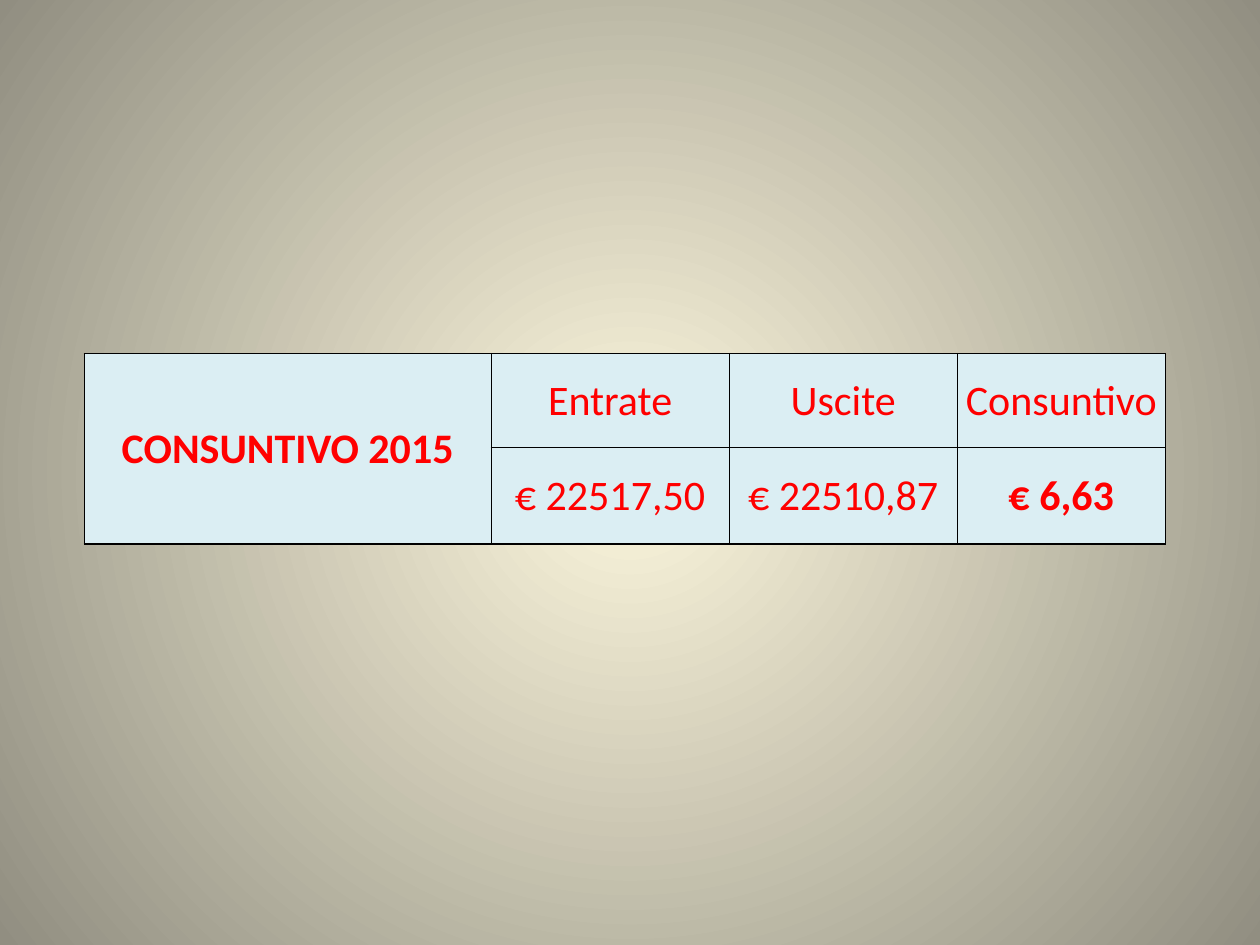
"""Build the slide with the 2015 final balance table."""
from lxml import etree
from pptx import Presentation
from pptx.dml.color import RGBColor
from pptx.enum import text
from pptx.oxml.ns import qn
from pptx.util import Cm, Pt

ROWS = [
    ["CONSUNTIVO 2015", "Entrate", "Uscite", "Consuntivo"],
    ["", "€ 22517,50", "€ 22510,87", "€ 6,63"],
]
BOLD = {"CONSUNTIVO 2015", "€ 6,63"}
WIDE = [8.2, 4.8, 4.6, 4.19]
HIGH = [1.88, 1.96]
LEFT, TOP = 1.7, 7.13
THEME = {
    "font": {"name": "Calibri", "size": Pt(24)},
    "ink": "FF0000",
    "fill": "DBEEF3",
    "line": "000000",
    "glow": ["FCF7DD", "918E81"],
    "thin": 0.5,
    "thick": 1,
}
CELL = {
    "vertical_anchor": text.MSO_ANCHOR.MIDDLE,
    "margin_left": Cm(0.03),
    "margin_right": Cm(0.03),
    "margin_top": Cm(0.03),
    "margin_bottom": 0,
}


def apply(obj, vals):
    """Set each named attribute of an object."""
    for key, val in vals.items():
        setattr(obj, key, val)


def add(up, tag, **vals):
    """Add a drawing element with attributes."""
    return etree.SubElement(up, qn("a:" + tag), vals)


def glow(slide):
    """Fill the background with a round gradient."""
    fill = slide.background.fill
    fill.gradient()
    for stop, tone, pos in zip(fill.gradient_stops, THEME["glow"], (0, 1)):
        stop.color.rgb = RGBColor.from_string(tone)
        stop.position = pos
    grad = slide._element.find(".//" + qn("a:gradFill"))
    grad.remove(grad.find(qn("a:lin")))
    ring = add(grad, "path", path="circle")
    add(ring, "fillToRect", **dict.fromkeys("ltrb", "50000"))


def edge(cell, sides):
    """Draw the cell borders, given as side and width in points."""
    prop = cell._tc.get_or_add_tcPr()
    for spot, (side, size) in enumerate(sides.items()):
        line = add(prop, "ln" + side, w=str(Pt(size)))
        add(add(line, "solidFill"), "srgbClr", val=THEME["line"])
        prop.insert(spot, line)


def dress(cell, word):
    """Write and format one cell."""
    cell.text = word
    apply(cell, CELL)
    cell.fill.solid()
    cell.fill.fore_color.rgb = RGBColor.from_string(THEME["fill"])
    para = cell.text_frame.paragraphs[0]
    para.alignment = text.PP_ALIGN.CENTER
    apply(para.font, THEME["font"])
    for run in para.runs:
        apply(run.font, THEME["font"] | {"bold": word in BOLD})
        run.font.color.rgb = RGBColor.from_string(THEME["ink"])


def main():
    """Make the deck and save it."""
    deck = Presentation()
    deck.slide_width, deck.slide_height = Cm(25.4), Cm(19.05)
    slide = deck.slides.add_slide(deck.slide_layouts[6])
    glow(slide)
    grid = slide.shapes.add_table(
        len(HIGH), len(WIDE), Cm(LEFT), Cm(TOP), Cm(sum(WIDE)), Cm(sum(HIGH))
    ).table
    for col, size in zip(grid.columns, WIDE):
        col.width = Cm(size)
    for row, size in zip(grid.rows, HIGH):
        row.height = Cm(size)
    thin, thick = THEME["thin"], THEME["thick"]
    for r, words in enumerate(ROWS):
        for c, word in enumerate(words):
            cell = grid.cell(r, c)
            dress(cell, word)
            edge(cell, {
                "L": thin if c else thick,
                "R": thin,
                "T": thin if r else thick,
                "B": thick if r or not c else thin,
            })
    grid.cell(0, 0).merge(grid.cell(1, 0))
    deck.save("out.pptx")


if __name__ == "__main__":
    main()
